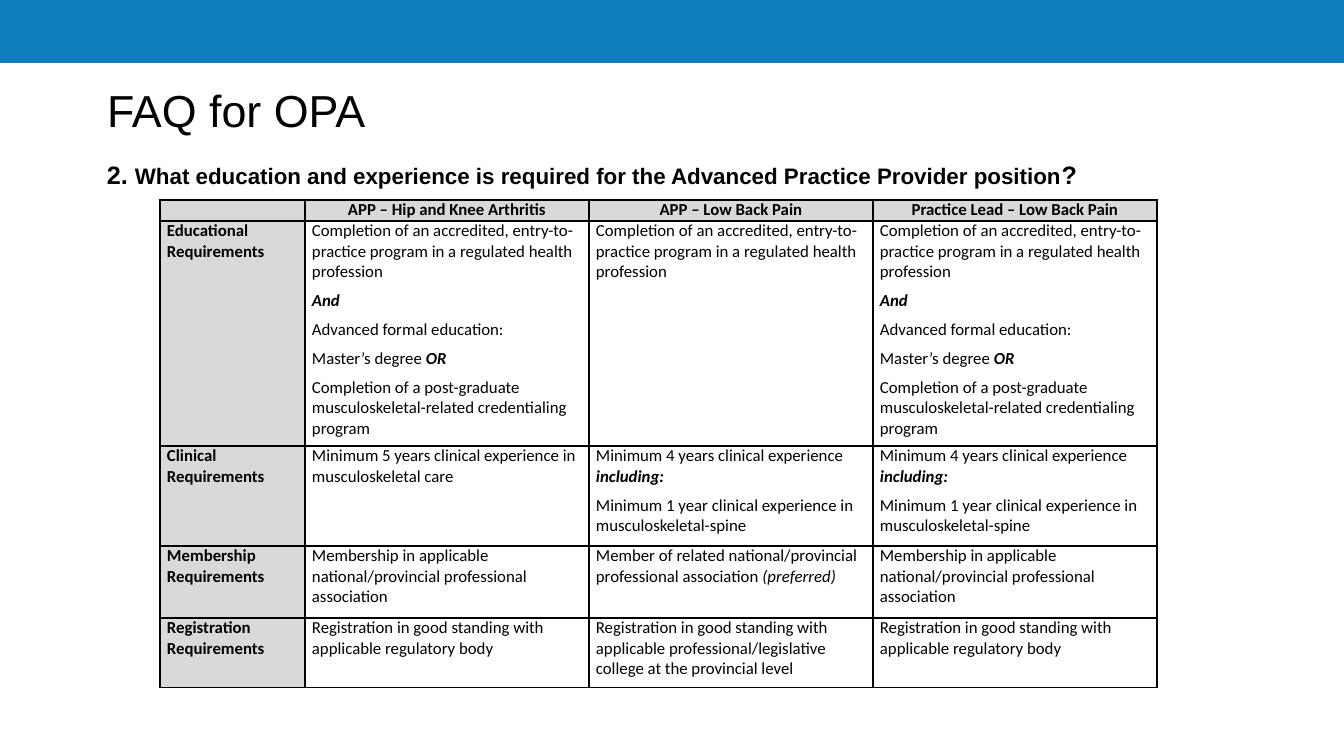
from lxml import etree
from pptx import Presentation, util as u
from pptx.dml.color import RGBColor
from pptx.enum import shapes, text
from pptx.oxml.ns import qn

# Content: a cell is a list of paragraphs, a paragraph a list of (text, style)
# Styles: "b" bold, "i" italic, "bi" both
TITLE = "FAQ for OPA"
QUESTION = [
    ("2. ", 18),
    ("What education and experience is required for the Advanced Practice Provider position", 16),
    ("?", 18),
]
HEADINGS = ["", "APP – Hip and Knee Arthritis", "APP – Low Back Pain", "Practice Lead – Low Back Pain"]

PROGRAM = [("Completion of an accredited, entry-to-practice program in a regulated health profession", "")]
ADVANCED = [
    PROGRAM,
    [("And", "bi")],
    [("Advanced formal education:", "")],
    [("Master’s degree ", ""), ("OR", "bi")],
    [("Completion of a post-graduate musculoskeletal-related credentialing program", "")],
]
SPINE = [
    [("Minimum 4 years clinical experience ", ""), ("including:", "bi")],
    [("Minimum 1 year clinical experience in musculoskeletal-spine", "")],
]
GENERAL = [[("Minimum 5 years clinical experience in musculoskeletal care", "")]]
MEMBERSHIP = [[("Membership in applicable national/provincial professional association", "")]]
RELATED = [[("Member of related national/provincial professional association ", ""), ("(preferred)", "i")]]
REGULATORY = [[("Registration in good standing with applicable regulatory body", "")]]
COLLEGE = [[("Registration in good standing with applicable professional/legislative college at the provincial level", "")]]

REQUIREMENTS = [
    ("Educational Requirements", ADVANCED, [PROGRAM], ADVANCED),
    ("Clinical Requirements", GENERAL, SPINE, SPINE),
    ("Membership Requirements", MEMBERSHIP, RELATED, MEMBERSHIP),
    ("Registration Requirements", REGULATORY, COLLEGE, REGULATORY),
]

# Layout in px
SLIDE = (1344, 756)
BANNER = (0, 0, 1344, 63)
TITLE_AREA = (97, 70, 302, 79)
QUESTION_AREA = (97, 148, 997, 50)
TABLE_ORIGIN = (160, 200)
COLUMN_WIDTHS = [145, 284, 284, 284]
ROW_HEIGHTS = [21, 225, 100, 72, 70]
CELL_MARGIN = 7
COLORS = {"banner": "0F80BD", "label": "D9D9D9", "ink": "000000"}


def px(value):
    return u.Inches(value / 100.8)


def area(values):
    return [px(value) for value in values]


def color(name):
    return RGBColor.from_string(COLORS[name])


def add_span(para, words, size, font, style=""):
    span = para.add_run()
    span.text = words
    span.font.size = u.Pt(size)
    span.font.name = font
    span.font.bold = "b" in style
    span.font.italic = "i" in style
    span.font.color.rgb = color("ink")


def add_borders(cell):
    properties = cell._tc.get_or_add_tcPr()
    for position, side in enumerate(("lnL", "lnR", "lnT", "lnB")):
        line = etree.Element(qn("a:" + side), w=str(u.Pt(1)))
        fill = etree.SubElement(line, qn("a:solidFill"))
        etree.SubElement(fill, qn("a:srgbClr"), val=COLORS["ink"])
        properties.insert(position, line)


def fill_cell(cell, paragraphs, shaded, centred):
    cell.margin_left = cell.margin_right = px(CELL_MARGIN)
    cell.margin_top = cell.margin_bottom = 0
    if shaded:
        cell.fill.solid()
        cell.fill.fore_color.rgb = color("label")
    else:
        cell.fill.background()
    add_borders(cell)
    frame = cell.text_frame
    for index, spans in enumerate(paragraphs):
        para = frame.add_paragraph() if index else frame.paragraphs[0]
        para.alignment = text.PP_ALIGN.CENTER if centred else text.PP_ALIGN.LEFT
        para.space_after = u.Pt(6)
        for words, style in spans:
            if words:
                add_span(para, words, 12, "Calibri", style)
            else:
                etree.SubElement(para._p, qn("a:endParaRPr"), sz="1200")


deck = Presentation()
deck.slide_width, deck.slide_height = area(SLIDE)
page = deck.slides.add_slide(deck.slide_layouts[5])

# Banner
banner = page.shapes.add_shape(shapes.MSO_SHAPE.RECTANGLE, *area(BANNER))
banner.shadow.inherit = False
banner.fill.solid()
banner.fill.fore_color.rgb = color("banner")
banner.line.fill.background()

# Title
title = page.shapes.title
title.left, title.top, title.width, title.height = area(TITLE_AREA)
title.text_frame.vertical_anchor = text.MSO_ANCHOR.MIDDLE
heading = title.text_frame.paragraphs[0]
heading.alignment = text.PP_ALIGN.LEFT
add_span(heading, TITLE, 32, "Arial")

# Question
box = page.shapes.add_textbox(*area(QUESTION_AREA))
box.text_frame.word_wrap = True
question = box.text_frame.paragraphs[0]
question.line_spacing = 1.2
for words, size in QUESTION:
    add_span(question, words, size, "Arial", "b")

# Requirements table
rows = [[[[(words, "b")]] for words in HEADINGS]]
rows += [[[[(label, "b")]], *cells] for label, *cells in REQUIREMENTS]
size = (sum(COLUMN_WIDTHS), sum(ROW_HEIGHTS))
table = page.shapes.add_table(len(rows), len(HEADINGS), *area(TABLE_ORIGIN + size)).table
table.horz_banding = False
for column, width in zip(table.columns, COLUMN_WIDTHS):
    column.width = px(width)
for row, height in zip(table.rows, ROW_HEIGHTS):
    row.height = px(height)
for r, cells in enumerate(rows):
    for c, paragraphs in enumerate(cells):
        fill_cell(table.cell(r, c), paragraphs, shaded=r == 0 or c == 0, centred=r == 0)

deck.save("out.pptx")
